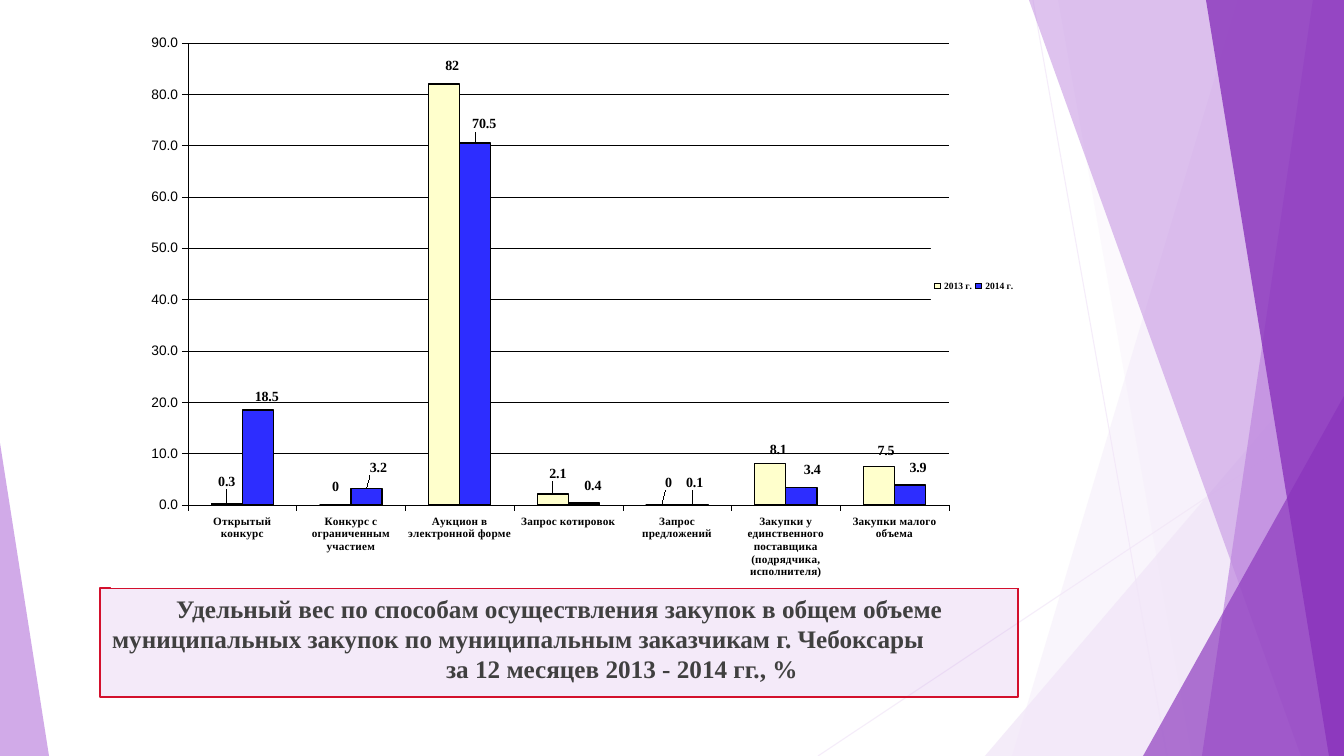
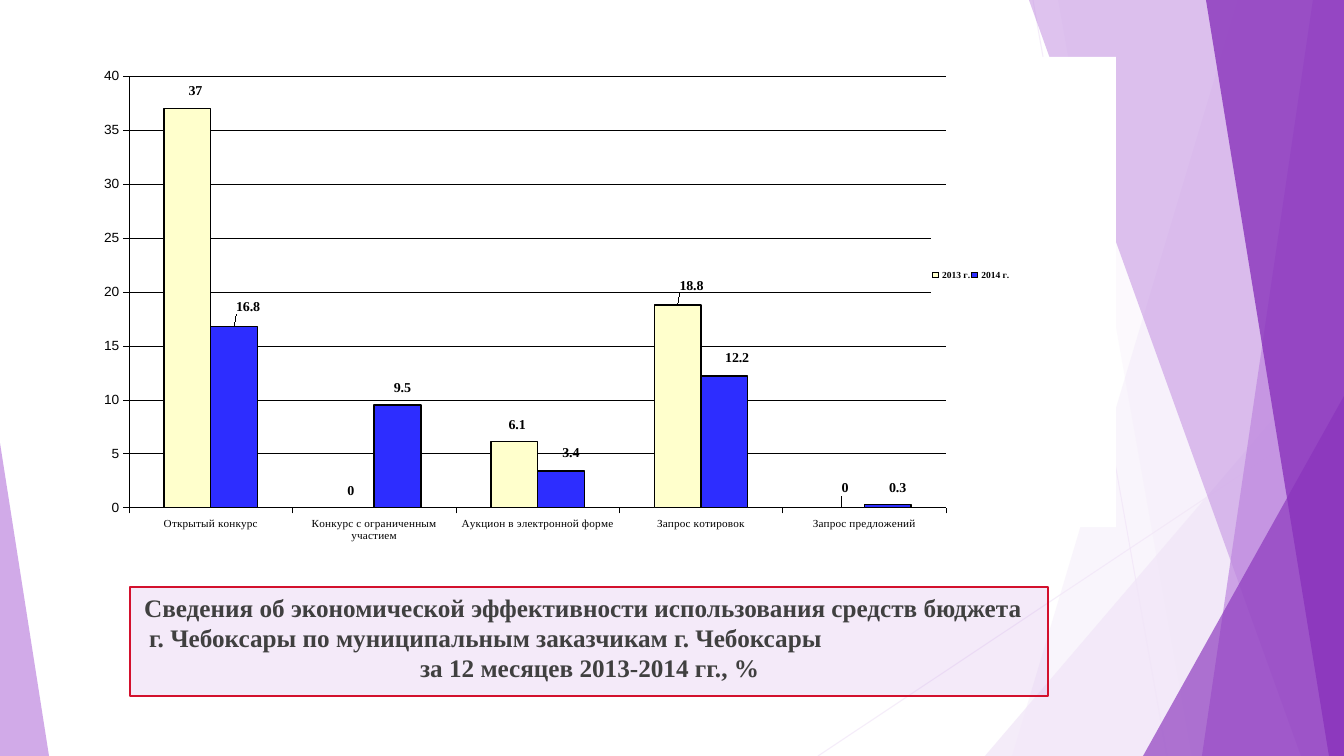
"""Build two slides comparing municipal procurement in 2013 and 2014."""
from dataclasses import dataclass

from pptx import Presentation
from pptx.chart.data import CategoryChartData
from pptx.dml.color import RGBColor
from pptx.enum.chart import XL_CHART_TYPE, XL_LABEL_POSITION, XL_LEGEND_POSITION, XL_TICK_LABEL_POSITION, XL_TICK_MARK
from pptx.enum.shapes import MSO_CONNECTOR, MSO_SHAPE
from pptx.enum.text import MSO_ANCHOR, MSO_AUTO_SIZE, PP_ALIGN
from pptx.oxml import parse_xml
from pptx.oxml.ns import nsdecls
from pptx.util import Pt

COLUMNS = XL_CHART_TYPE.COLUMN_CLUSTERED
OUTSIDE_END = XL_LABEL_POSITION.OUTSIDE_END
LEGEND_RIGHT = XL_LEGEND_POSITION.RIGHT
LABELS_LOW = XL_TICK_LABEL_POSITION.LOW
TICK_OUTSIDE, TICK_NONE = XL_TICK_MARK.OUTSIDE, XL_TICK_MARK.NONE
STRAIGHT = MSO_CONNECTOR.STRAIGHT
TRIANGLE = MSO_SHAPE.ISOSCELES_TRIANGLE
WIDTH, HEIGHT = 1344, 756
PX = 12192000 / WIDTH


@dataclass(frozen=True)
class Theme:
    pale: RGBColor = RGBColor.from_string("F1E5F8")
    lilac: RGBColor = RGBColor.from_string("BE87DF")
    purple: RGBColor = RGBColor.from_string("8933BC")
    red: RGBColor = RGBColor.from_string("D3102D")
    gray: RGBColor = RGBColor.from_string("404040")
    black: RGBColor = RGBColor.from_string("000000")
    cream: RGBColor = RGBColor.from_string("FFFFCC")
    blue: RGBColor = RGBColor.from_string("2D2DFF")
    serif: str = "Times New Roman"
    sans: str = "Arial"
    caption: float = 18
    label: float = 10
    value_axis: float = 9.8
    category_axis: float = 8
    legend: float = 6.8


THEME = Theme()


def set_alpha(shape, percent):
    """Make the first colour of a shape partly transparent."""
    color = shape.element.xpath("p:spPr//a:srgbClr")[0]
    color.append(parse_xml(f'<a:alpha {nsdecls("a")} val="{percent * 1000}"/>'))


def add_layout(parent, index, size, box, prefix=""):
    """Insert a manual chart layout, given in px of the chart."""
    values = [round(length / size[i % 2], 4) for i, length in enumerate(box)]
    fields = "".join(f'<c:{name} val="{value}"/>' for name, value in zip("xywh", values))
    parent.insert(index, parse_xml(
        f'<c:layout {nsdecls("c")}><c:manualLayout>{prefix}{fields}</c:manualLayout></c:layout>'))


EDGES = '<c:xMode val="edge"/><c:yMode val="edge"/>'
INNER_EDGES = '<c:layoutTarget val="inner"/>' + EDGES
SERIES = (("2013 г.", THEME.cream), ("2014 г.", THEME.blue))
HAIRLINES = ((1033, 0, 1167, HEIGHT), (WIDTH, 406, 818, HEIGHT))
BACKDROP = (
    ((1238, 1012), THEME.pale, 36),
    ((1058, 1192), THEME.pale, 20),
    ((985, 336, WIDTH, 1), THEME.pale, 72),
    ((1029, 1301), THEME.lilac, 50),
    ((1313, 1202), THEME.lilac, 70),
    ((1206, 1329), THEME.purple, 80),
    ((1143, 396, WIDTH, 1), THEME.purple, 66),
    ((0, 443, 49, 0), THEME.lilac, 70),
)
SLIDES = (
    {
        "caption": (100, 588, 918, 109),
        "lines": (
            ("Удельный вес по способам осуществления закупок в общем объеме", 66),
            ("муниципальных закупок по муниципальным заказчикам г. Чебоксары", 2),
            ("за 12 месяцев 2013 - 2014 гг., %", 336),
        ),
        "chart": (111, 0, 914, 588),
        "plot": (188, 43, 761, 462),
        "legend": (931, 244, 86, 84),
        "categories": (
            "Открытый конкурс", "Конкурс с ограниченным участием",
            "Аукцион в электронной форме", "Запрос котировок", "Запрос предложений",
            "Закупки у единственного поставщика (подрядчика, исполнителя)",
            "Закупки малого объема",
        ),
        "values": ((0.3, 0, 82, 2.1, 0, 8.1, 7.5), (18.5, 3.2, 70.5, 0.4, 0.1, 3.4, 3.9)),
        "offsets": (
            (0, -10), (0, -6), (8, -6), (5, -9), (7, -10), (8, -2), (7, -4),
            (9, -1), (12, -9), (9, -7), (9, -5), (2, -10), (11, -6), (8, -5),
        ),
        "scale": (90, 10, "0.0"),
        "bold": True,
    },
    {
        "caption": (130, 587, 918, 109),
        "lines": (
            ("Сведения об экономической эффективности использования средств бюджета", 4),
            ("г. Чебоксары по муниципальным заказчикам г. Чебоксары", 9),
            ("за 12 месяцев 2013-2014 гг., %", 280),
        ),
        "chart": (104, 57, 1012, 485),
        "plot": (129, 77, 817, 445),
        "legend": (931, 240, 80, 84),
        "categories": (
            "Открытый конкурс", "Конкурс с ограниченным участием",
            "Аукцион в электронной форме", "Запрос котировок", "Запрос предложений",
        ),
        "values": ((37, 0, 6.1, 18.8, 0), (16.8, 9.5, 3.4, 12.2, 0.3)),
        "offsets": (
            (8, -6), (0, -5), (3, -6), (14, -8), (4, -8),
            (14, -8), (5, -6), (10, -7), (13, -7), (10, -5),
        ),
        "scale": (40, 5, "General"),
        "bold": False,
    },
)

presentation = Presentation()
presentation.slide_width, presentation.slide_height = round(WIDTH * PX), round(HEIGHT * PX)
layout = presentation.slide_layouts[5]
slides = [presentation.slides.add_slide(layout) for _ in SLIDES]

shapes = slides[0].shapes
decorations = []
for ends in HAIRLINES:
    connector = shapes.add_connector(STRAIGHT, *(round(length * PX) for length in ends))
    connector.line.color.rgb = THEME.pale
    connector.line.width = Pt(0.75)
    set_alpha(connector, 70)
    connector.element.spPr.append(parse_xml(f'<a:effectLst {nsdecls("a")}/>'))
    decorations.append(connector)

for geometry, color, alpha in BACKDROP:
    if len(geometry) == 2:
        top_x, bottom_x = geometry
        builder = shapes.build_freeform(top_x, 0, scale=PX)
        builder.add_line_segments(((WIDTH, 0), (WIDTH, HEIGHT), (bottom_x, HEIGHT)))
        shape = builder.convert_to_shape()
    else:
        left, top, right, apex = geometry
        box = (left, top, right - left, HEIGHT - top)
        shape = shapes.add_shape(TRIANGLE, *(round(length * PX) for length in box))
        shape.adjustments[0] = apex
    shape.fill.solid()
    shape.fill.fore_color.rgb = color
    shape.line.fill.background()
    shape.shadow.inherit = False
    set_alpha(shape, alpha)
    decorations.append(shape)

for number, shape in enumerate(decorations):
    shape.element.xpath("./*[1]/p:cNvPr")[0].set("id", str(20 + number))
    layout.shapes.element.insert(2 + number, shape.element)

for slide, content in zip(slides, SLIDES):
    caption = slide.shapes.title
    caption.left, caption.top, caption.width, caption.height = (
        round(length * PX) for length in content["caption"])
    caption.fill.solid()
    caption.fill.fore_color.rgb = THEME.lilac
    set_alpha(caption, 17)
    caption.line.color.rgb = THEME.red
    caption.line.width = Pt(1.25)
    text_frame = caption.text_frame
    text_frame.word_wrap = True
    text_frame.auto_size = MSO_AUTO_SIZE.NONE
    text_frame.vertical_anchor = MSO_ANCHOR.TOP
    text_frame.text = "\n".join(text for text, _ in content["lines"])
    for paragraph, (_, indent) in zip(text_frame.paragraphs, content["lines"]):
        paragraph.alignment = PP_ALIGN.LEFT
        paragraph.space_before = Pt(0)
        paragraph._p.get_or_add_pPr().set("marL", str(round(indent * PX)))
        font = paragraph.runs[0].font
        font.size, font.name, font.bold = Pt(THEME.caption), THEME.serif, True
        font.color.rgb = THEME.gray

    chart_data = CategoryChartData()
    chart_data.categories = content["categories"]
    for (name, _), values in zip(SERIES, content["values"]):
        chart_data.add_series(name, values)
    left, top, *size = content["chart"]
    frame = slide.shapes.add_chart(
        COLUMNS, *(round(length * PX) for length in content["chart"]), chart_data)
    chart = frame.chart
    chart.has_title = False
    chart.has_legend = True
    chart.legend.position = LEGEND_RIGHT
    chart.legend.include_in_layout = False
    plot = chart.plots[0]
    plot.gap_width, plot.overlap, plot.vary_by_categories = 150, 0, False

    category_axis, value_axis = chart.category_axis, chart.value_axis
    category_axis.tick_label_position = LABELS_LOW
    value_axis.minimum_scale = 0
    value_axis.maximum_scale, value_axis.major_unit, number_format = content["scale"]
    value_axis.tick_labels.number_format = number_format
    value_axis.tick_labels.number_format_is_linked = False
    value_axis.has_major_gridlines = True
    for axis in (category_axis, value_axis):
        axis.major_tick_mark, axis.minor_tick_mark = TICK_OUTSIDE, TICK_NONE
    for part in (category_axis, value_axis, value_axis.major_gridlines):
        part.format.line.color.rgb = THEME.black
        part.format.line.width = Pt(0.25)

    fonts = [
        (chart.font, THEME.value_axis, THEME.sans, False),
        (value_axis.tick_labels.font, THEME.value_axis, THEME.sans, False),
        (category_axis.tick_labels.font, THEME.category_axis, THEME.serif, content["bold"]),
        (chart.legend.font, THEME.legend, THEME.serif, True),
    ]
    for series, (_, color) in zip(plot.series, SERIES):
        series.invert_if_negative = False
        series.format.fill.solid()
        series.format.fill.fore_color.rgb = color
        series.format.line.color.rgb = THEME.black
        series.format.line.width = Pt(1)
        series.data_labels.show_value = True
        fonts.append((series.data_labels.font, THEME.label, THEME.serif, True))
        for index in range(len(content["categories"])):
            label = series.points[index].data_label
            label.position = OUTSIDE_END
            fonts.append((label.font, THEME.label, THEME.serif, True))
    for font, points, name, bold in fonts:
        font.size, font.name, font.bold = Pt(points), name, bold
        font.color.rgb = THEME.black

    for label, offset in zip(chart.element.xpath("//c:ser/c:dLbls/c:dLbl"), content["offsets"]):
        add_layout(label, 1, size, offset)
    for automatic in chart.element.xpath("//c:plotArea/c:layout | //c:legend/c:layout"):
        automatic.getparent().remove(automatic)
    for query, index, key, prefix in (
            ("//c:plotArea", 0, "plot", INNER_EDGES), ("//c:legend", 1, "legend", EDGES)):
        x, y, width, height = content[key]
        add_layout(chart.element.xpath(query)[0], index, size, (x - left, y - top, width, height), prefix)
    for query in ("c:chart", "//c:legend/c:overlay"):
        chart.element.xpath(query)[0].addnext(parse_xml(
            f'<c:spPr {nsdecls("c", "a")}><a:solidFill><a:srgbClr val="FFFFFF"/></a:solidFill>'
            '<a:ln><a:noFill/></a:ln></c:spPr>'))

presentation.save("out.pptx")
